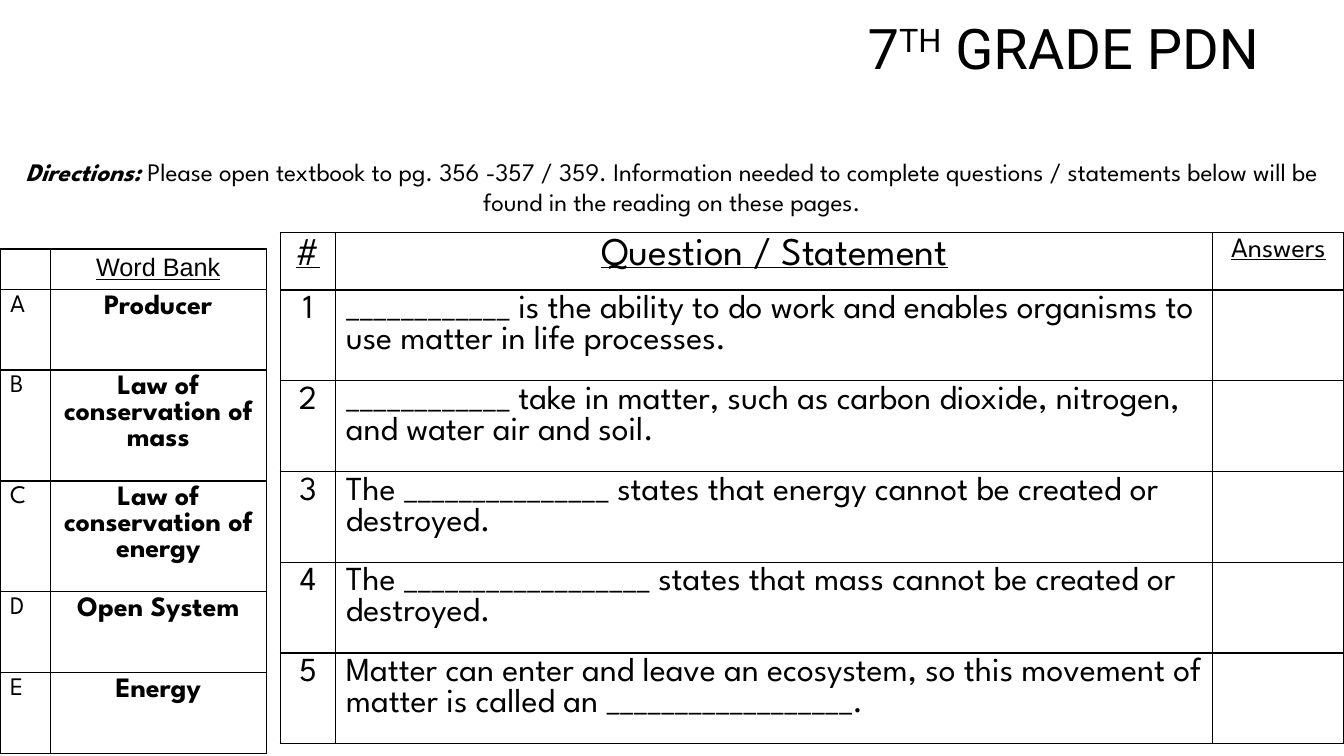
from dataclasses import dataclass

from lxml import etree
from pptx import Presentation
from pptx import util as u
from pptx.dml.color import RGBColor
from pptx.enum import text as t
from pptx.oxml import ns

WIDE, HIGH = 13.33, 7.5
LEFT, MID, RIGHT = t.PP_ALIGN.LEFT, t.PP_ALIGN.CENTER, t.PP_ALIGN.RIGHT


@dataclass(frozen=True)
class Theme:
    ink: str = "000000"
    line: float = 1
    head: str = "Roboto"
    body: str = "League Spartan"
    plain: str = "Arial"
    title: int = 40
    big: int = 28
    ask: int = 24
    term: int = 20
    note: int = 18


T = Theme()
LETTER = dict(size=T.note)
TERM = dict(size=T.term, bold=True, align=MID)
NUMBER = dict(size=T.ask, align=MID)
ASK = dict(size=T.ask)
HEAD = dict(size=T.big, underline=True, align=MID)

WORDS = ["Producer", "Law of conservation of mass",
         "Law of conservation of energy", "Open System", "Energy"]
ASKS = [
    "____________ is the ability to do work and enables organisms to use matter in life processes.",
    "____________ take in matter, such as carbon dioxide, nitrogen, and water air and soil.",
    "The _______________ states that energy cannot be created or destroyed.",
    "The __________________ states that mass cannot be created or destroyed.",
    "Matter can enter and leave an ecosystem, so this movement of matter is called an __________________.",
]


def add_run(para, words, size, name=T.body, lift=0, **form):
    """Add styled words; lift raises them, in percent of the type size."""
    run = para.add_run()
    run.text = words
    for key, val in dict(form, size=u.Pt(size), name=name).items():
        setattr(run.font, key, val)
    run.font.color.rgb = RGBColor.from_string(T.ink)
    if lift:
        run.font._element.set("baseline", str(lift * 1000))


def add_text(slide, box, runs, align, space, anchor):
    """Place one paragraph; box holds shares of the slide's size."""
    x, y, w, h = box
    shape = slide.shapes.add_textbox(
        u.Inches(x * WIDE), u.Inches(y * HIGH),
        u.Inches(w * WIDE), u.Inches(h * HIGH))
    frame = shape.text_frame
    frame.word_wrap, frame.vertical_anchor = True, anchor
    para = frame.paragraphs[0]
    para.alignment, para.line_spacing = align, space
    for words, form in runs:
        add_run(para, words, **form)


def add_edges(cell):
    props = cell._tc.get_or_add_tcPr()
    for side in reversed(("lnL", "lnR", "lnT", "lnB")):
        edge = etree.Element(ns.qn("a:" + side), w=str(u.Pt(T.line)))
        fill = etree.SubElement(edge, ns.qn("a:solidFill"))
        etree.SubElement(fill, ns.qn("a:srgbClr"), val=T.ink)
        props.insert(0, edge)


def fill_cell(cell, words="", align=LEFT, **form):
    cell.fill.background()
    add_edges(cell)
    if words:
        para = cell.text_frame.paragraphs[0]
        para.alignment = align
        add_run(para, words, **form)


def add_grid(slide, x, y, cols, rows, cells):
    """Draw a ruled table; each cell is a pair of words and format."""
    size = [u.Inches(v) for v in (x, y, sum(cols), sum(rows))]
    table = slide.shapes.add_table(len(rows), len(cols), *size).table
    table.first_row = table.horz_banding = False
    for col, wide in zip(table.columns, cols):
        col.width = u.Inches(wide)
    for row, high, line in zip(table.rows, rows, cells):
        row.height = u.Inches(high)
        for cell, (words, form) in zip(row.cells, line):
            fill_cell(cell, words, **form)


def main():
    deck = Presentation()
    deck.slide_width, deck.slide_height = u.Inches(WIDE), u.Inches(HIGH)
    slide = deck.slides.add_slide(deck.slide_layouts[6])

    head = dict(size=T.title, name=T.head)
    add_text(slide, (0.238, 0, 0.706, 0.135),
             [("7", head), ("TH", dict(head, lift=30)), (" GRADE PDN", head)],
             RIGHT, 0.9, t.MSO_ANCHOR.MIDDLE)
    add_text(slide, (0, 0.199, 1, 0.095),
             [("Directions: ", dict(size=T.note, bold=True, italic=True)),
              ("Please open textbook to pg. 356 -357 / 359. Information needed "
               "to complete questions / statements below will be found in the "
               "reading on these pages.", dict(size=T.note))],
             MID, u.Pt(22), t.MSO_ANCHOR.TOP)

    bank = [[("", LETTER), ("Word Bank", dict(HEAD, size=T.note, name=T.plain))]]
    bank += [[(mark, LETTER), (word, TERM)] for mark, word in zip("ABCDE", WORDS)]
    add_grid(slide, 0, 2.47, [0.5, 2.14], [0.4, 0.8, 1.1, 1.1, 0.8, 0.8], bank)

    quiz = [[("#", HEAD), ("Question / Statement", HEAD),
             ("Answers", dict(HEAD, size=T.term))]]
    quiz += [[(str(num), NUMBER), (ask, ASK), ("", ASK)]
             for num, ask in enumerate(ASKS, 1)]
    add_grid(slide, 2.78, 2.31, [0.55, 8.7, 1.3], [0.56] + [0.9] * 5, quiz)
    deck.save("out.pptx")


if __name__ == "__main__":
    main()
